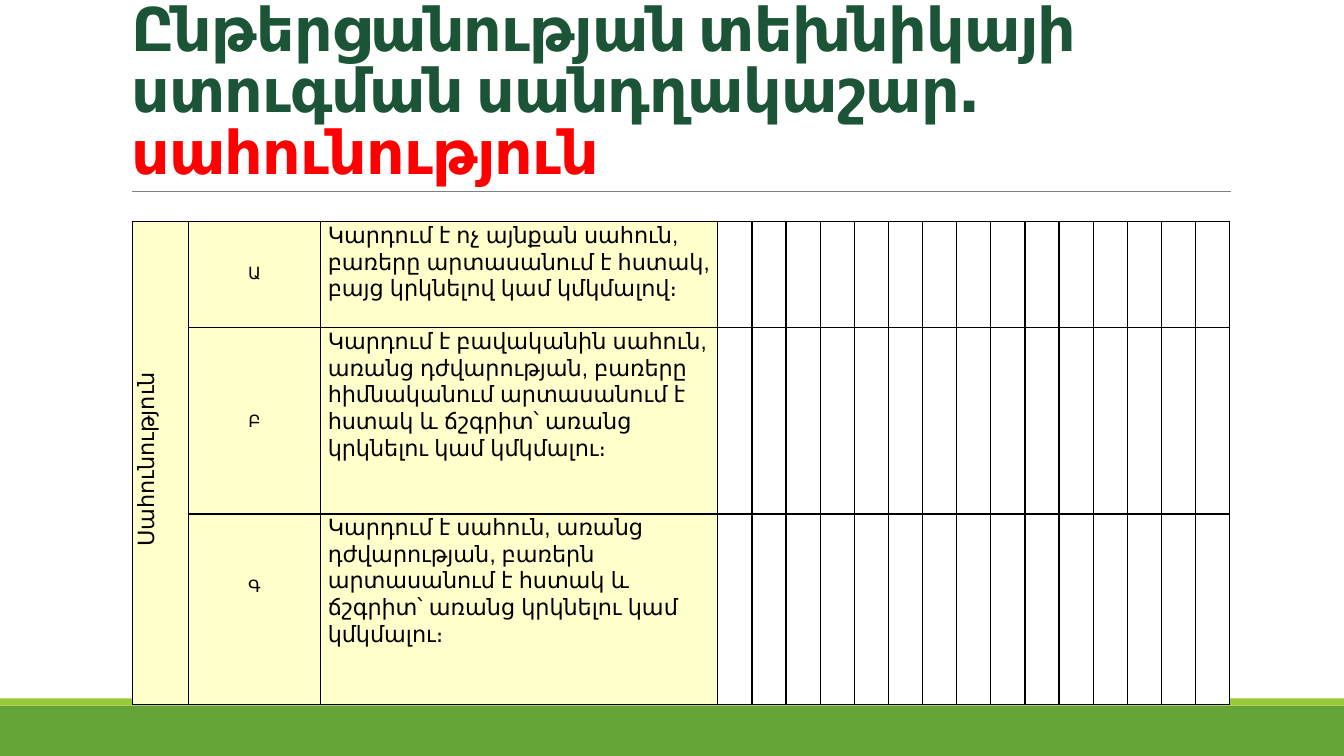
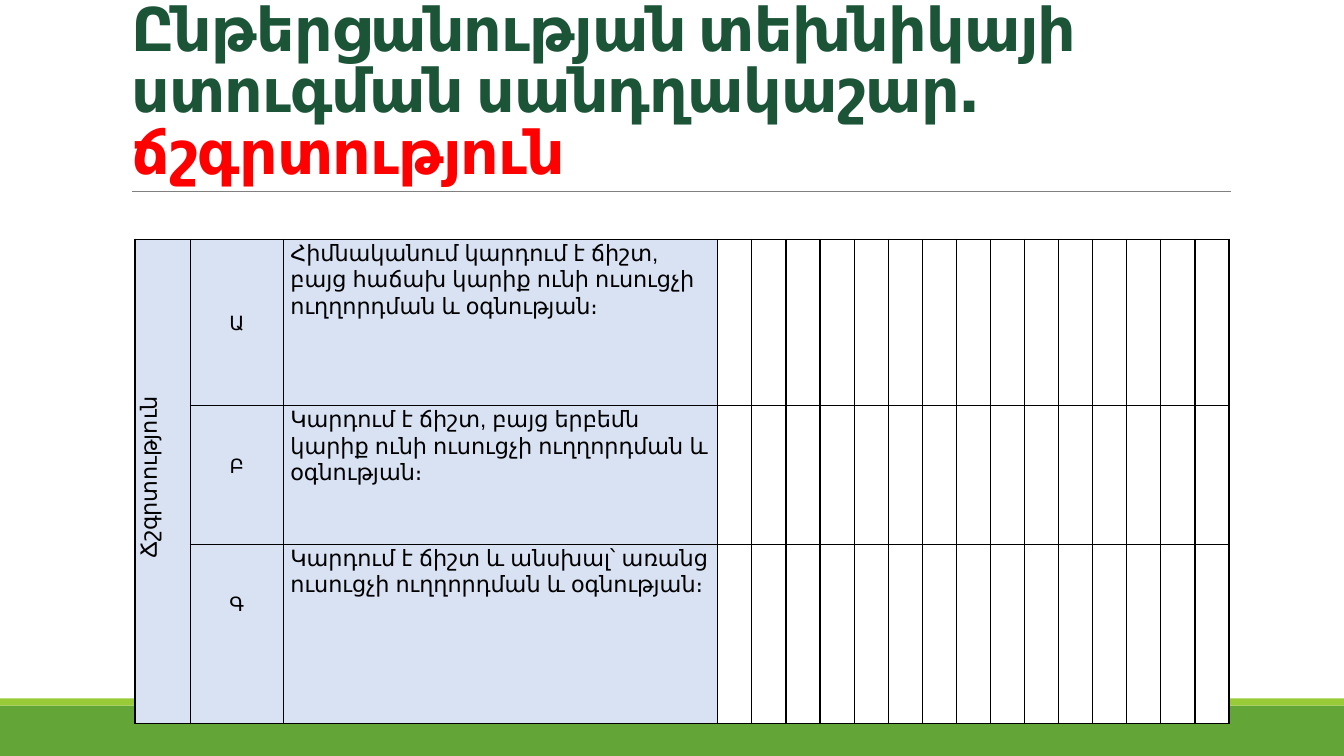
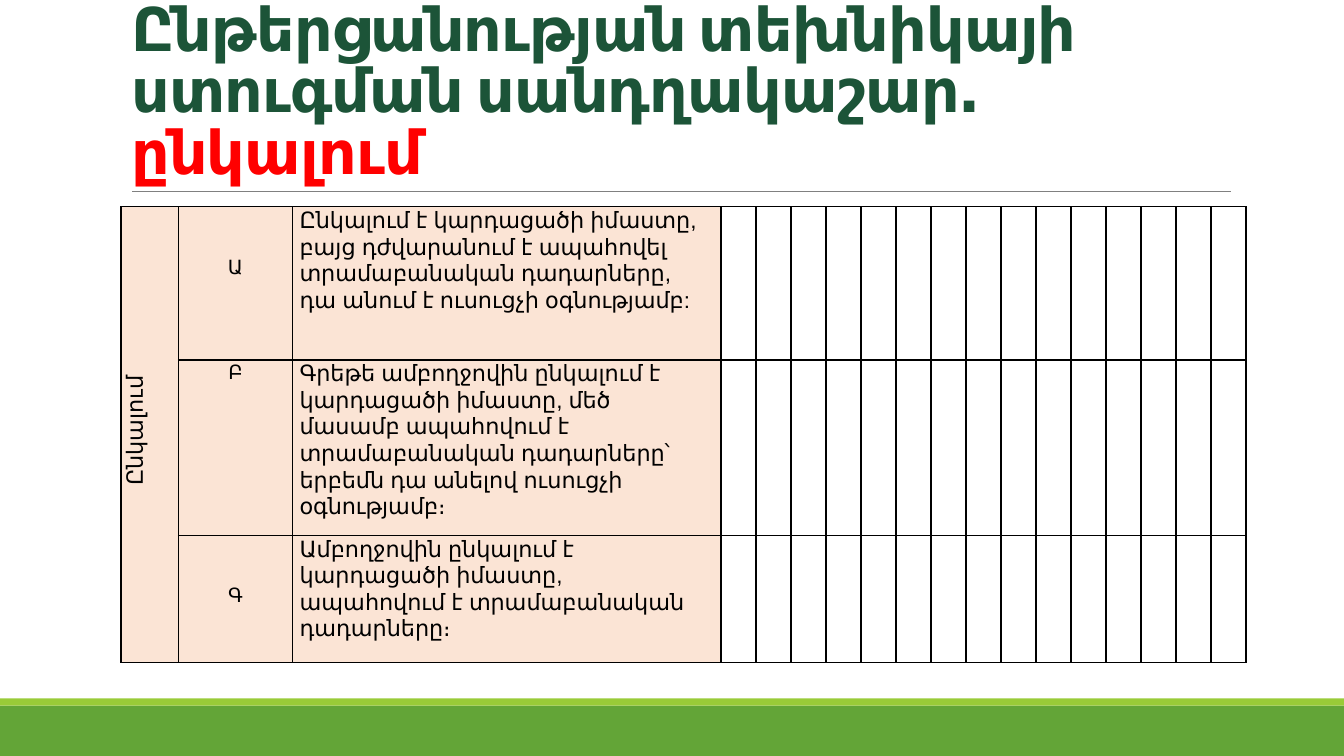
"""Build three reading assessment scale slides."""
import dataclasses

import lxml.etree
import pptx
import pptx.dml.color
import pptx.enum.shapes
import pptx.enum.text
import pptx.oxml.ns
import pptx.util

Cm = pptx.util.Cm
Pt = pptx.util.Pt
qn = pptx.oxml.ns.qn
Align = pptx.enum.text.PP_ALIGN


@dataclasses.dataclass(frozen=True)
class Theme:
    band: str = "63A537"
    stripe: str = "99CB38"
    rule: str = "808080"
    title: str = "1C5438"
    accent: str = "FF0000"
    text: str = "000000"
    paper: str = "FFFFFF"
    title_font: str = "Calibri"
    body_font: str = "Arial"
    title_size: int = 43
    body_size: int = 16


THEME = Theme()
SLIDE_WIDTH, SLIDE_HEIGHT = 33.87, 19.05
SCORE_COLUMNS = 15
TITLE_START = "Ընթերցանության տեխնիկայի ստուգման սանդղակաշար․ "

SCALES = [
    {
        "aspect": "սահունություն", "label": "Սահունություն", "fill": "FFFFCC",
        "place": (3.33, 5.59, 27.66), "columns": (1.42, 3.33, 10.01),
        "rows": (2.67, 4.69, 4.81), "letter_size": 12,
        "levels": [
            ("Ա", 2, "Կարդում է ոչ այնքան սահուն, բառերը արտասանում է հստակ, "
                     "բայց կրկնելով կամ կմկմալով։"),
            ("Բ", 4, "Կարդում է բավականին սահուն, առանց դժվարության, բառերը հիմնականում "
                     "արտասանում է հստակ և ճշգրիտ՝ առանց կրկնելու կամ կմկմալու։"),
            ("Գ", 3, "Կարդում է սահուն, առանց դժվարության, բառերն արտասանում է հստակ "
                     "և ճշգրիտ՝ առանց կրկնելու կամ կմկմալու։"),
        ],
    },
    {
        "aspect": "ճշգրտություն", "label": "Ճշգրտություն", "fill": "D9E2F3",
        "place": (3.4, 6.03, 27.58), "columns": (1.4, 2.34, 10.95),
        "rows": (4.19, 3.5, 4.51), "letter_size": 14,
        "levels": [
            ("Ա", 3, "Հիմնականում կարդում է ճիշտ, բայց հաճախ կարիք ունի ուսուցչի "
                     "ուղղորդման և օգնության։"),
            ("Բ", 2, "Կարդում է ճիշտ, բայց երբեմն կարիք ունի ուսուցչի "
                     "ուղղորդման և օգնության։"),
            ("Գ", 2, "Կարդում է ճիշտ և անսխալ՝ առանց ուսուցչի ուղղորդման և օգնության։"),
        ],
    },
    {
        "aspect": "ընկալում", "label": "Ընկալում", "fill": "FBE4D5",
        "place": (3.05, 5.21, 28.35), "columns": (1.45, 2.87, 10.8),
        "rows": (3.86, 4.42, 3.2), "letter_size": 14,
        "levels": [
            ("Ա", 2, "Ընկալում է կարդացածի իմաստը, բայց դժվարանում է ապահովել "
                     "տրամաբանական դադարները, դա անում է ուսուցչի օգնությամբ:"),
            ("Բ", 0, "Գրեթե ամբողջովին ընկալում է կարդացածի իմաստը, մեծ մասամբ ապահովում է "
                     "տրամաբանական դադարները՝ երբեմն դա անելով ուսուցչի օգնությամբ։"),
            ("Գ", 2, "Ամբողջովին ընկալում է կարդացածի իմաստը, ապահովում է "
                     "տրամաբանական դադարները։"),
        ],
    },
]


def rgb(value):
    """Return a colour object for a hex value."""
    return pptx.dml.color.RGBColor.from_string(value)


def set_values(target, values):
    """Set each named attribute on the target."""
    for name, value in values.items():
        setattr(target, name, value)


def fill_solid(target, color):
    """Give a shape or cell a plain fill."""
    target.fill.solid()
    target.fill.fore_color.rgb = rgb(color)


def add_run(paragraph, text, color, font):
    """Add a formatted run to a paragraph."""
    run = paragraph.add_run()
    run.text = text
    set_values(run.font, font)
    run.font.color.rgb = rgb(color)


def add_band(slide, top, height, color):
    """Add a full-width colour band."""
    band = slide.shapes.add_shape(
        pptx.enum.shapes.MSO_SHAPE.RECTANGLE, 0, Cm(top), Cm(SLIDE_WIDTH), Cm(height))
    band.shadow.inherit = False
    fill_solid(band, color)
    band.line.fill.background()
    return band


def add_rule(slide, left, right, top):
    """Add the thin line under the title."""
    rule = slide.shapes.add_connector(
        pptx.enum.shapes.MSO_CONNECTOR.STRAIGHT, Cm(left), Cm(top), Cm(right), Cm(top))
    rule.line.width = Pt(0.5)
    rule.line.color.rgb = rgb(THEME.rule)
    lxml.etree.SubElement(rule.element.find(qn("p:spPr")), qn("a:effectLst"))
    return rule


def prepare_layout(layout, slide):
    """Place the title and move the shared decoration into the layout."""
    set_values(layout.placeholders[0], {
        "left": Cm(3.05), "top": Cm(0.79), "width": Cm(27.94), "height": Cm(4.04)})
    decoration = [
        add_band(slide, 17.78, 1.27, THEME.band),
        add_band(slide, 17.6, 0.18, THEME.stripe),
        add_rule(slide, 3.33, 31.01, 4.83),
    ]
    for position, shape in enumerate(decoration, start=2):
        layout.shapes.element.insert(position, shape.element)


def add_title(slide, aspect):
    """Write the two-colour title."""
    title = slide.shapes.title
    set_values(title.text_frame, {
        "word_wrap": True, "auto_size": pptx.enum.text.MSO_AUTO_SIZE.NONE,
        "vertical_anchor": pptx.enum.text.MSO_ANCHOR.BOTTOM})
    paragraph = title.text_frame.paragraphs[0]
    set_values(paragraph, {"alignment": Align.LEFT, "line_spacing": 0.85})
    font = {"name": THEME.title_font, "size": Pt(THEME.title_size), "bold": True}
    add_run(paragraph, TITLE_START, THEME.title, font)
    add_run(paragraph, aspect, THEME.accent, font)
    for properties in title.element.iter(qn("a:rPr")):
        properties.set("spc", "-50")


def write_cell(cell, text, size, alignment, drop=0):
    """Write cell text, lowered by a number of lines."""
    cell.margin_top = Pt(round(drop * size * 1.23, 2))
    paragraph = cell.text_frame.paragraphs[0]
    set_values(paragraph, {"alignment": alignment, "line_spacing": 1.07})
    add_run(paragraph, text, THEME.text, {"name": THEME.body_font, "size": Pt(size)})


def add_borders(frame):
    """Draw a thin black border around every cell."""
    for properties in frame.element.iter(qn("a:tcPr")):
        for position, side in enumerate(("lnL", "lnR", "lnT", "lnB")):
            border = lxml.etree.Element(qn("a:" + side), w=str(Pt(1)))
            fill = lxml.etree.SubElement(border, qn("a:solidFill"))
            lxml.etree.SubElement(fill, qn("a:srgbClr"), val=THEME.text)
            properties.insert(position, border)


def turn_label(frame):
    """Turn the first cell's text to read upwards."""
    next(frame.element.iter(qn("a:tcPr"))).set("vert", "vert270")
    next(frame.element.iter(qn("a:pPr"))).set("marL", str(Cm(0.2)))


def add_scale_table(slide, scale):
    """Add the scale table with its empty score columns."""
    left, top, width = scale["place"]
    score_width = (width - sum(scale["columns"])) / SCORE_COLUMNS
    widths = list(scale["columns"]) + [score_width] * SCORE_COLUMNS
    frame = slide.shapes.add_table(
        len(scale["rows"]), len(widths),
        Cm(left), Cm(top), Cm(width), Cm(sum(scale["rows"])))
    table = frame.table
    set_values(table, {"first_row": False, "horz_banding": False})
    for column, column_width in zip(table.columns, widths):
        column.width = Cm(column_width)
    for row, height in zip(table.rows, scale["rows"]):
        row.height = Cm(height)
        for index, cell in enumerate(row.cells):
            set_values(cell, {"margin_left": Cm(0.18), "margin_right": Cm(0.18),
                              "margin_top": 0, "margin_bottom": 0})
            fill_solid(cell, scale["fill"] if index < 3 else THEME.paper)
    table.cell(0, 0).merge(table.cell(len(scale["rows"]) - 1, 0))
    write_cell(table.cell(0, 0), scale["label"], THEME.body_size, Align.CENTER)
    for index, (letter, drop, description) in enumerate(scale["levels"]):
        write_cell(table.cell(index, 1), letter, scale["letter_size"], Align.CENTER, drop)
        write_cell(table.cell(index, 2), description, THEME.body_size, Align.LEFT)
    turn_label(frame)
    add_borders(frame)


def main():
    """Build and save the presentation."""
    presentation = pptx.Presentation()
    set_values(presentation, {
        "slide_width": Cm(SLIDE_WIDTH), "slide_height": Cm(SLIDE_HEIGHT)})
    layout = presentation.slide_layouts.get_by_name("Title Only")
    slides = [presentation.slides.add_slide(layout) for scale in SCALES]
    prepare_layout(layout, slides[0])
    for slide, scale in zip(slides, SCALES):
        add_title(slide, scale["aspect"])
        add_scale_table(slide, scale)
    presentation.save("out.pptx")


if __name__ == "__main__":
    main()
